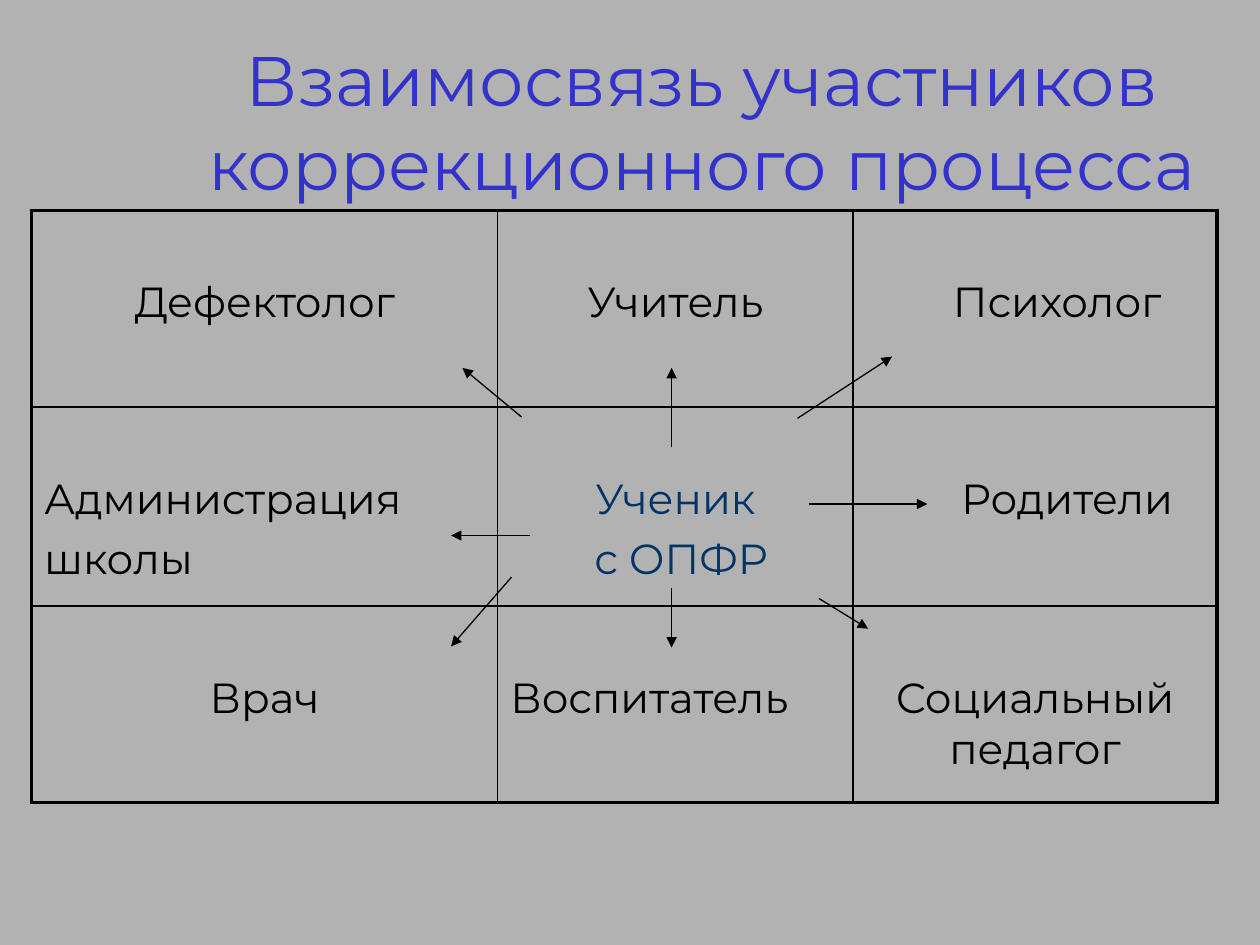
from dataclasses import dataclass

from lxml.etree import SubElement
from pptx import Presentation
from pptx.dml.color import RGBColor
from pptx.enum.shapes import MSO_CONNECTOR
from pptx.enum.text import MSO_ANCHOR, MSO_AUTO_SIZE, PP_ALIGN
from pptx.oxml import parse_xml
from pptx.oxml.ns import nsdecls, qn
from pptx.util import Inches, Pt


@dataclass(frozen=True)
class Theme:
    font: str = "Montserrat"
    back: str = "B2B2B2"
    head: str = "3333CC"
    ink: str = "000000"
    focus: str = "003366"
    big: float = 40
    body: float = 24
    gap: float = 4.8
    thick: float = 2.25
    thin: float = 1
    arrow: float = 0.75


THEME = Theme()
LEFT, MID = PP_ALIGN.LEFT, PP_ALIGN.CENTER
COLS = (3.7, 2.82, 2.89)
ROWS = (1.56, 1.58, 1.56)

# Each cell lists its lines as (text, alignment, indent)
ROLES = (
    ([("Дефектолог", MID, 0)],
     [("Учитель", MID, 0)],
     [("Психолог", MID, 0.35)]),
    ([("Администрация", LEFT, 0), ("школы", LEFT, 0)],
     [("Ученик", MID, 0), ("с ОПФР", MID, 0.09)],
     [("Родители", MID, 0.51)]),
    ([("Врач", MID, 0)],
     [("Воспитатель", LEFT, 0)],
     [("Социальный педагог", MID, 0)]),
)

# Start and end of each arrow, measured from the table's corner
LINKS = (
    (3.89, 1.64, 3.42, 1.25),
    (6.08, 1.65, 6.83, 1.16),
    (5.08, 1.88, 5.08, 1.25),
    (3.81, 2.91, 3.33, 3.46),
    (6.25, 3.08, 6.64, 3.32),
    (5.08, 3.0, 5.08, 3.47),
    (3.96, 2.58, 3.33, 2.58),
    (6.17, 2.33, 7.11, 2.33),
)


def add_run(para, text, size, color):
    run = para.add_run()
    run.text = text
    run.font.name = THEME.font
    run.font.size = Pt(size)
    run.font.color.rgb = RGBColor.from_string(color)


def add_title(slide, left, top, width, height):
    title = slide.shapes.title
    title.left, title.top = Inches(left), Inches(top)
    title.width, title.height = Inches(width), Inches(height)
    frame = title.text_frame
    frame.word_wrap = True
    frame.auto_size = MSO_AUTO_SIZE.NONE
    frame.vertical_anchor = MSO_ANCHOR.MIDDLE
    frame.margin_left, frame.margin_right = Inches(1.56), 0
    para = frame.paragraphs[0]
    para.alignment = MID
    add_run(para, "Взаимосвязь участников коррекционного процесса",
            THEME.big, THEME.head)


def set_edges(cell, row, col):
    """Thick lines around the table, thin lines inside."""
    outer = (col == 0, col == len(COLS) - 1, row == 0, row == len(ROWS) - 1)
    props = cell._tc.get_or_add_tcPr()
    for spot, (side, edge) in enumerate(zip("LRTB", outer)):
        width = Pt(THEME.thick if edge else THEME.thin)
        props.insert(spot, parse_xml(
            f'<a:ln{side} {nsdecls("a")} w="{width}"><a:solidFill>'
            f'<a:srgbClr val="{THEME.ink}"/></a:solidFill></a:ln{side}>'))


def fill_cell(cell, lines, color):
    cell.fill.background()
    cell.margin_top = Inches(0.53)
    frame = cell.text_frame
    for spot, (text, align, indent) in enumerate(lines):
        para = frame.add_paragraph() if spot else frame.paragraphs[0]
        para.alignment = align
        if spot:
            para.space_before = Pt(THEME.gap)
        if indent:
            para._p.get_or_add_pPr().set("marL", str(Inches(indent)))
        add_run(para, text, THEME.body, color)


def add_grid(slide, left, top):
    table = slide.shapes.add_table(
        len(ROWS), len(COLS), Inches(left), Inches(top),
        Inches(sum(COLS)), Inches(sum(ROWS))).table
    table.first_row = table.horz_banding = False
    for col, width in zip(table.columns, COLS):
        col.width = Inches(width)
    for row, height in zip(table.rows, ROWS):
        row.height = Inches(height)
    for r, roles in enumerate(ROLES):
        for c, lines in enumerate(roles):
            cell = table.cell(r, c)
            center = (r, c) == (1, 1)
            fill_cell(cell, lines, THEME.focus if center else THEME.ink)
            set_edges(cell, r, c)


def add_links(slide, left, top):
    for x1, y1, x2, y2 in LINKS:
        link = slide.shapes.add_connector(
            MSO_CONNECTOR.STRAIGHT, Inches(left + x1), Inches(top + y1),
            Inches(left + x2), Inches(top + y2))
        link.line.width = Pt(THEME.arrow)
        link.line.color.rgb = RGBColor.from_string(THEME.ink)
        SubElement(link.line._get_or_add_ln(), qn("a:tailEnd"),
                   type="triangle")
        SubElement(link._element.spPr, qn("a:effectLst"))


def main():
    deck = Presentation()
    deck.slide_width, deck.slide_height = Inches(10), Inches(7.5)
    slide = deck.slides.add_slide(deck.slide_layouts[5])
    back = slide.background.fill
    back.solid()
    back.fore_color.rgb = RGBColor.from_string(THEME.back)

    # Heading, table of roles, arrows from the pupil
    add_title(slide, 0, 0.33, 9.58, 1.25)
    add_grid(slide, 0.25, 1.67)
    add_links(slide, 0.25, 1.67)
    deck.save("out.pptx")


if __name__ == "__main__":
    main()
